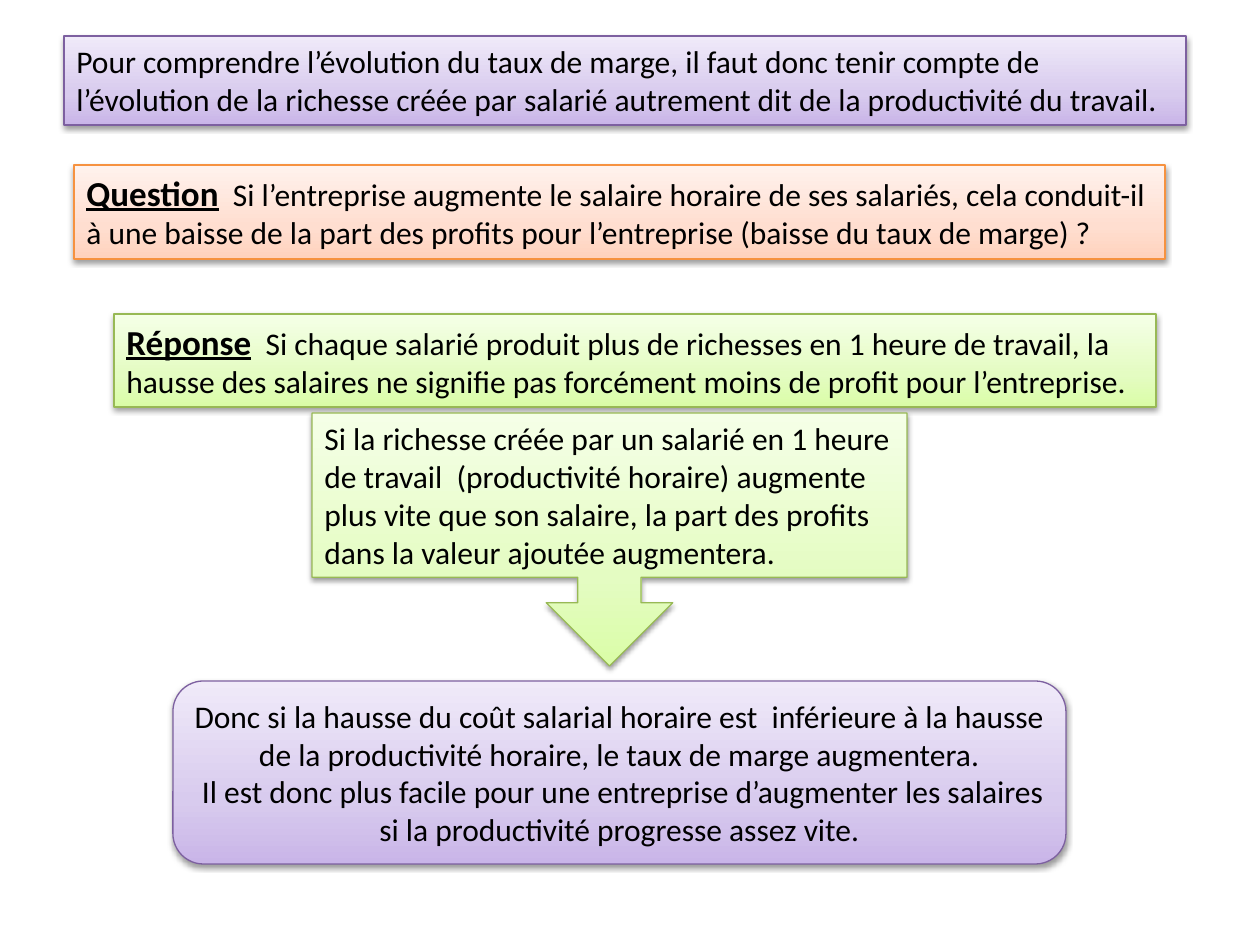
from copy import deepcopy
from dataclasses import dataclass

from lxml.etree import SubElement
from pptx import Presentation
from pptx.dml.color import RGBColor
from pptx.enum.shapes import MSO_SHAPE as Shape
from pptx.enum.text import MSO_ANCHOR, MSO_AUTO_SIZE, PP_ALIGN as Align
from pptx.oxml.ns import qn
from pptx.util import Emu, Pt

PX_PER_INCH = 126


@dataclass(frozen=True)
class Palette:
    line: str
    stops: tuple  # colours from bottom to top


@dataclass(frozen=True)
class Theme:
    font: str = "Calibri"
    text: str = "000000"
    body_size: int = 18
    label_size: int = 20
    line_width: float = 0.75
    stop_positions: tuple = (0, 0.35, 1)
    purple: Palette = Palette("7D60A0", ("C9B5E8", "D8CBEE", "F0EAF9"))
    orange: Palette = Palette("F69240", ("FFD2BD", "FFDED0", "FFF2ED"))
    green: Palette = Palette("98B955", ("DAFDA7", "E4FCC2", "F5FFE7"))


THEME = Theme()


def px(length):
    return Emu(round(length * 914400 / PX_PER_INCH))


def rgb(value):
    return RGBColor.from_string(value)


def fill_gradient(panel, colours):
    fill = panel.fill
    fill.gradient()
    fill.gradient_angle = 90
    stop_list = panel._element.spPr.find(".//" + qn("a:gsLst"))
    stop_list.append(deepcopy(stop_list[0]))  # python-pptx starts with two stops
    for stop, position, colour in zip(fill.gradient_stops, THEME.stop_positions, colours):
        stop.position = position
        stop.color.rgb = rgb(colour)


def add_soft_shadow(panel):
    panel.shadow.inherit = False
    effects = panel._element.spPr.find(qn("a:effectLst"))
    shadow = SubElement(effects, qn("a:outerShdw"), blurRad="40000", dist="20000",
                        dir="5400000", rotWithShape="0")
    colour = SubElement(shadow, qn("a:srgbClr"), val="000000")
    SubElement(colour, qn("a:alpha"), val="38000")


def add_panel(slide, preset, box, palette):
    panel = slide.shapes.add_shape(preset, *map(px, box))
    fill_gradient(panel, palette.stops)
    panel.line.color.rgb = rgb(palette.line)
    panel.line.width = Pt(THEME.line_width)
    add_soft_shadow(panel)
    return panel


def write_text(panel, paragraphs, label=None, align=Align.LEFT, anchor=MSO_ANCHOR.TOP):
    """Write the paragraphs, the first one led by an underlined label if given."""
    frame = panel.text_frame
    frame.word_wrap = True
    frame.auto_size = MSO_AUTO_SIZE.SHAPE_TO_FIT_TEXT
    frame.vertical_anchor = anchor
    for index, text in enumerate(paragraphs):
        paragraph = frame.add_paragraph() if index else frame.paragraphs[0]
        paragraph.alignment = align
        paragraph.font.name = THEME.font
        paragraph.font.size = Pt(THEME.body_size)
        paragraph.font.color.rgb = rgb(THEME.text)
        if label and index == 0:
            lead = paragraph.add_run()
            lead.text = label
            lead.font.size = Pt(THEME.label_size)
            lead.font.bold = lead.font.underline = True
        paragraph.add_run().text = text


def main():
    deck = Presentation()
    deck.slide_width, deck.slide_height = px(1260), px(945)
    slide = deck.slides.add_slide(deck.slide_layouts[6])

    intro = add_panel(slide, Shape.RECTANGLE, (64, 36, 1122, 89), THEME.purple)
    write_text(intro, [
        "Pour comprendre l’évolution du taux de marge, il faut donc tenir compte de "
        "l’évolution de la richesse créée par salarié autrement dit de la productivité "
        "du travail."])

    question = add_panel(slide, Shape.RECTANGLE, (74, 165, 1091, 94), THEME.orange)
    write_text(question, [
        "  Si l’entreprise augmente le salaire horaire de ses salariés, cela conduit-il à "
        "une baisse de la part des profits pour l’entreprise (baisse du taux de marge) ?"],
        label="Question")

    answer = add_panel(slide, Shape.RECTANGLE, (114, 314, 1042, 93), THEME.green)
    write_text(answer, [
        "  Si chaque salarié produit plus de richesses en 1 heure de travail, la hausse des "
        "salaires ne signifie pas forcément moins de profit pour l’entreprise."],
        label="Réponse")

    reason = add_panel(slide, Shape.DOWN_ARROW_CALLOUT, (312, 413, 595, 253), THEME.green)
    write_text(reason, [
        "Si la richesse créée par un salarié en 1 heure de travail  (productivité horaire) "
        "augmente plus vite que son salaire, la part des profits dans la valeur ajoutée "
        "augmentera."])

    conclusion = add_panel(slide, Shape.ROUNDED_RECTANGLE, (173, 681, 893, 183), THEME.purple)
    write_text(conclusion, [
        "Donc si la hausse du coût salarial horaire est  inférieure à la hausse de la "
        "productivité horaire, le taux de marge augmentera.",
        " Il est donc plus facile pour une entreprise d’augmenter les salaires si la "
        "productivité progresse assez vite."],
        align=Align.CENTER, anchor=MSO_ANCHOR.MIDDLE)

    deck.save("out.pptx")


if __name__ == "__main__":
    main()
